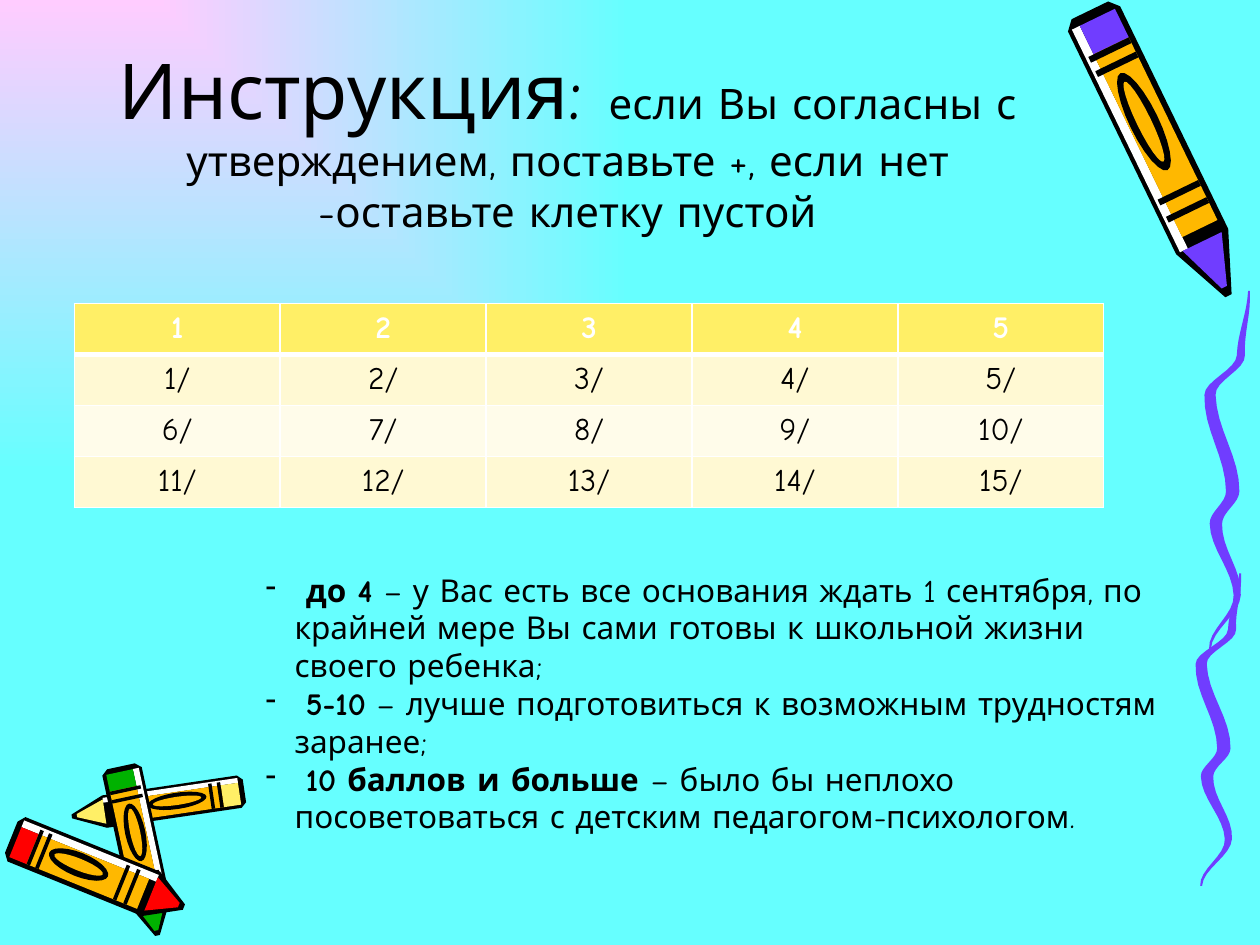
from dataclasses import dataclass
from math import cos, hypot, pi, sin, tau
from typing import NamedTuple

from lxml.etree import SubElement
from pptx import Presentation
from pptx.dml.color import RGBColor as RGB
from pptx.enum.text import MSO_ANCHOR as Anchor, PP_ALIGN as Align
from pptx.oxml import parse_xml
from pptx.oxml.ns import nsdecls, qn
from pptx.util import Emu, Inches, Pt

FONT = "Comic Neue"
BLACK = RGB(0, 0, 0)
WHITE = RGB(255, 255, 255)
VIOLET = RGB(0x70, 0x3D, 0xFF)
ORANGE = RGB(0xFF, 0xB8, 0x00)
YELLOW = RGB(0xFF, 0xEF, 0x66)
RED = RGB(0xFF, 0, 0)
GREEN = RGB(0, 0xB2, 0)
CREAM = RGB(0xFF, 0xF9, 0xD3)
IVORY = RGB(0xFF, 0xFC, 0xEA)
PINK = RGB(0xFF, 0xCC, 0xFF)
AQUA = RGB(0x66, 0xFF, 0xFF)
WIDE, HIGH = Inches(10), Inches(7.5)
Point = tuple[float, float]


@dataclass(frozen=True)
class Box:
    """A frame in percent of the slide's width and height."""
    left: float
    top: float
    width: float
    height: float

    def place(self) -> tuple[Emu, ...]:
        return (Emu(int(WIDE * self.left / 100)), Emu(int(HIGH * self.top / 100)),
                Emu(int(WIDE * self.width / 100)), Emu(int(HIGH * self.height / 100)))


@dataclass(frozen=True)
class Crayon:
    """Ends in percent of the slide, half width in percent of its width.

    The shine lies to the right of the drawing direction if shine is 1, else to the left.
    """
    tail: Point
    tip: Point
    half: float
    color: RGB
    shine: int

    def spot(self, along: float, across: float) -> Point:
        """Turn a share of the length and of the half width into a slide position."""
        x, y = WIDE * self.tail[0] / 100, HIGH * self.tail[1] / 100
        run = WIDE * self.tip[0] / 100 - x
        rise = HIGH * self.tip[1] / 100 - y
        side = across * self.shine * WIDE * self.half / 100 / hypot(run, rise)
        return x + run * along - rise * side, y + rise * along + run * side


class Words(NamedTuple):
    text: str
    size: int = 18
    bold: bool = False
    color: RGB = BLACK


TITLE = Box(7.5, 2.27, 75.1, 23.33)
GRID = Box(5.9, 32.13, 81.7, 21.6)
NOTES = Box(20.1, 59.73, 74.8, 29.6)

PENCIL = Crayon((86.5, 1.1), (97.5, 31.3), 2.3, VIOLET, 1)
CRAYONS = [Crayon((19.4, 83.7), (5.7, 86.4), 1.3, YELLOW, 1),
           Crayon((9.6, 81.1), (12.5, 99), 1.6, GREEN, -1),
           Crayon((0.9, 88.6), (14.6, 96), 1.9, RED, -1)]
NIB = 0.81                          # where the barrel ends and the nib begins
BANDS = (0.13, 0.18, 0.63, 0.69)    # stripes around the barrel

WAVES = [Box(94.9, 60.67, 3.6, 33.07), Box(95.6, 30.8, 3.6, 37.87)]
TURNS = [(0.98, 0), (0.8, 0.18), (0.12, 0.29), (0.62, 0.56),
         (0.25, 0.65), (0.72, 0.85), (0.12, 1)]    # bends as shares of a wave's box
STEPS = 8                           # points from one bend to the next

HEAD = [Words("Инструкция: ", 44),
        Words("если Вы согласны с утверждением, поставьте +, если нет -оставьте клетку пустой", 24)]
SCORES = [
    [Words(" до 4 ", bold=True),
     Words("– у Вас есть все основания ждать 1 сентября, по крайней мере Вы сами готовы "
           "к школьной жизни своего ребенка;")],
    [Words(" 5-10", bold=True),
     Words(" – лучше подготовиться к возможным трудностям заранее;")],
    [Words(" 10 баллов и больше ", bold=True),
     Words("– было бы неплохо посоветоваться с детским педагогом-психологом.")],
]


def paint(slide) -> None:
    """Fill the background with a gradient that spreads from the top left corner."""
    slide.element.cSld.insert(0, parse_xml(
        f'<p:bg {nsdecls("p", "a")}><p:bgPr><a:gradFill><a:gsLst>'
        f'<a:gs pos="0"><a:srgbClr val="{PINK}"/></a:gs>'
        f'<a:gs pos="100000"><a:srgbClr val="{AQUA}"/></a:gs></a:gsLst>'
        '<a:path path="rect"><a:fillToRect r="100000" b="100000"/></a:path>'
        '</a:gradFill><a:effectLst/></p:bgPr></p:bg>'))


def patch(group, points: list[Point], color: RGB) -> None:
    first, *rest = points
    pen = group.shapes.build_freeform(*first)
    pen.add_line_segments(rest, close=True)
    shape = pen.convert_to_shape()
    shape.shadow.inherit = False
    shape.fill.solid()
    shape.fill.fore_color.rgb = color
    shape.line.fill.background()


def draw(slide, crayon: Crayon) -> None:
    """Stack the parts of a crayon on a black hull, which shows as the outline."""
    group = slide.shapes.add_group_shape()

    def part(color: RGB, *marks: Point) -> None:
        patch(group, [crayon.spot(*mark) for mark in marks], color)

    def strip(color: RGB, start: float, end: float, low: float, high: float) -> None:
        part(color, (start, low), (end, low), (end, high), (start, high))

    def oval(color: RGB, length: float, width: float) -> None:
        turns = [tau * i / 24 for i in range(24)]
        part(color, *[(0.39 + length * cos(t), width * sin(t)) for t in turns])

    part(BLACK, (0.03, -1), (0, -0.7), (0, 0.7), (0.03, 1),
         (NIB, 1), (1, 0.12), (1, -0.12), (NIB, -1))
    strip(WHITE, 0.03, NIB, 0.55, 0.85)
    strip(crayon.color, 0.03, BANDS[0], -0.8, 0.55)
    strip(ORANGE, BANDS[0], NIB - 0.04, -0.8, 0.55)
    part(crayon.color, (NIB, -0.75), (0.97, -0.1), (0.97, 0.1), (NIB, 0.75))
    for band in BANDS:
        strip(BLACK, band, band + 0.02, -0.8, 0.75)
    oval(BLACK, 0.17, 0.5)
    oval(ORANGE, 0.14, 0.25)


def ribbon(slide, box: Box) -> None:
    """Ease from bend to bend, and make the band thin at both ends."""
    left, top, width, height = box.place()
    spine = [(x + (u - x) * (1 - cos(pi * i / STEPS)) / 2, y + (v - y) * i / STEPS)
             for (x, y), (u, v) in zip(TURNS, TURNS[1:]) for i in range(STEPS)]
    spine.append(TURNS[-1])

    def bank(side: int) -> list[Point]:
        return [(left + width * (x + side * (0.02 + 0.13 * sin(pi * y))), top + height * y)
                for x, y in spine]

    patch(slide, bank(-1) + bank(1)[::-1], VIOLET)


def write(para, words: list[Words]) -> None:
    for word in words:
        run = para.add_run()
        run.text = word.text
        font = run.font
        font.name, font.size, font.bold = FONT, Pt(word.size), word.bold
        font.color.rgb = word.color


def frame(slide, box: Box):
    text = slide.shapes.add_textbox(*box.place()).text_frame
    text.word_wrap = True
    return text


def bullet(para) -> None:
    props = para._p.get_or_add_pPr()
    props.set("marL", str(Inches(0.23)))
    props.set("indent", str(-Inches(0.23)))
    SubElement(props, qn("a:buChar")).set("char", "-")


def edge(cell, side: str, width: float) -> None:
    props = cell._tc.get_or_add_tcPr()
    line = parse_xml(f'<a:{side} {nsdecls("a")} w="{Pt(width)}"><a:solidFill>'
                     f'<a:srgbClr val="{WHITE}"/></a:solidFill></a:{side}>')
    props.insert(len(props) - 1, line)


def table(slide, rows: int = 4, cols: int = 5) -> None:
    grid = slide.shapes.add_table(rows, cols, *GRID.place()).table
    for row in range(rows):
        for col in range(cols):
            cell = grid.cell(row, col)
            cell.fill.solid()
            cell.fill.fore_color.rgb = (CREAM if row % 2 else IVORY) if row else YELLOW
            for side in ("lnL", "lnR", "lnT", "lnB"):
                thick = (row, side) in ((0, "lnB"), (1, "lnT"))
                edge(cell, side, 3 if thick else 1)
            para = cell.text_frame.paragraphs[0]
            para.alignment = Align.CENTER
            word = (Words(f"{(row - 1) * cols + col + 1}/") if row
                    else Words(str(col + 1), bold=True, color=WHITE))
            write(para, [word])


def main() -> None:
    deck = Presentation()
    deck.slide_width, deck.slide_height = WIDE, HIGH
    slide = deck.slides.add_slide(deck.slide_layouts[6])
    paint(slide)
    for crayon in [PENCIL, *CRAYONS]:
        draw(slide, crayon)
    for box in WAVES:
        ribbon(slide, box)

    title = frame(slide, TITLE)
    title.vertical_anchor = Anchor.BOTTOM
    title.paragraphs[0].alignment = Align.CENTER
    write(title.paragraphs[0], HEAD)
    table(slide)

    notes = frame(slide, NOTES)
    for i, score in enumerate(SCORES):
        para = notes.add_paragraph() if i else notes.paragraphs[0]
        bullet(para)
        write(para, score)
    deck.save("out.pptx")


if __name__ == "__main__":
    main()
